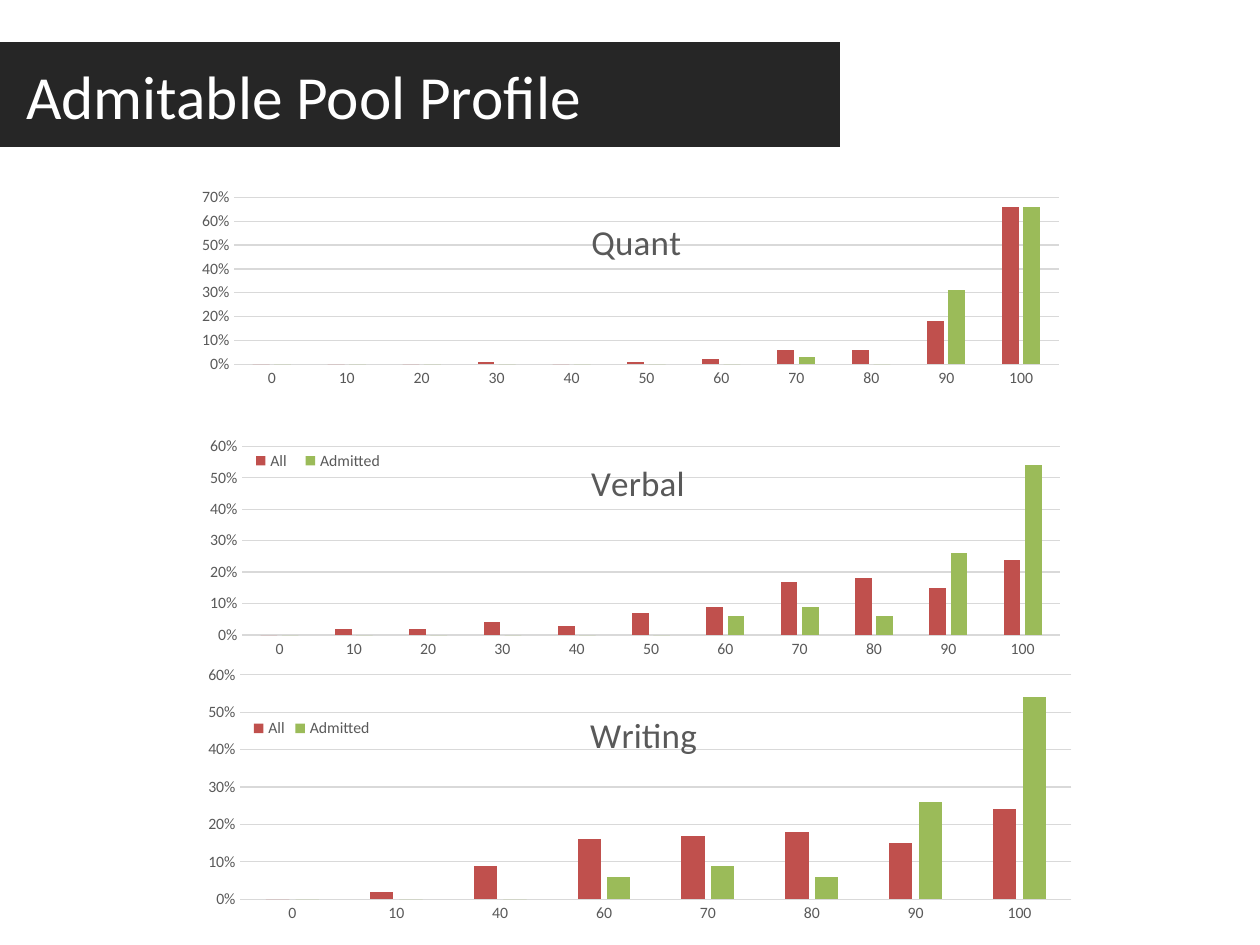
from pptx import Presentation
from pptx.chart.data import CategoryChartData
from pptx.dml.color import RGBColor
from pptx.enum.chart import XL_CHART_TYPE as ChartType
from pptx.enum.chart import XL_LEGEND_POSITION as LegendPosition
from pptx.enum.chart import XL_TICK_MARK as TickMark
from pptx.enum.shapes import MSO_SHAPE as Shape
from pptx.enum.text import MSO_ANCHOR as Anchor
from pptx.oxml.ns import qn
from pptx.oxml.xmlchemy import OxmlElement
from pptx.util import Pt

FONT = "Calibri"
GREY, GRID = "595959", "D9D9D9"
SERIES_COLORS = {"All": "C0504D", "Admitted": "9BBB59"}
DECILES = [str(value) for value in range(0, 101, 10)]

# Frame is left, top, width, height in points; layouts are fractions of it
CHARTS = [
    dict(title="Quant", frame=(103.7, 84.2, 512.6, 144), categories=DECILES,
         all_scores=[0, 0, 0, 0.01, 0, 0.01, 0.02, 0.06, 0.06, 0.18, 0.66],
         admitted=[0, 0, 0, 0, 0, 0, 0, 0.03, 0, 0.31, 0.66], top=0.7,
         plot=(0.059, 0.199, 0.919, 0.662), title_at=(0.45, 0.25)),
    dict(title="Verbal", frame=(108, 226.1, 508.3, 151.9), categories=DECILES,
         all_scores=[0, 0.02, 0.02, 0.04, 0.03, 0.07, 0.09, 0.17, 0.18, 0.15, 0.24],
         admitted=[0, 0, 0, 0, 0, 0, 0.06, 0.09, 0.06, 0.26, 0.54], top=0.6,
         plot=(0.06, 0.191, 0.919, 0.71), title_at=(0.445, 0.21),
         legend_at=(0.06, 0.2, 0.17, 0.09)),
    dict(title="Writing", frame=(108, 380.2, 516.2, 156.2),
         categories=["0", "10", "40", "60", "70", "80", "90", "100"],
         all_scores=[0, 0.02, 0.09, 0.16, 0.17, 0.18, 0.15, 0.24],
         admitted=[0, 0, 0, 0.06, 0.09, 0.06, 0.26, 0.54], top=0.6,
         plot=(0.057, 0.035, 0.92, 0.821), title_at=(0.437, 0.14),
         legend_at=(0.066, 0.186, 0.14, 0.09)),
]


def rgb(color):
    return RGBColor.from_string(color)


def style_font(font, size, color):
    font.name, font.size, font.bold = FONT, Pt(size), False
    font.color.rgb = rgb(color)


def style_line(line, color):
    line.color.rgb = rgb(color)
    line.width = Pt(0.75)


def add_banner(page, text, *, frame, fill, size, color, indent):
    box = page.shapes.add_shape(Shape.RECTANGLE, *map(Pt, frame))
    box.shadow.inherit = False
    box.fill.solid()
    box.fill.fore_color.rgb = rgb(fill)
    box.line.fill.background()
    box.text_frame.word_wrap = True
    box.text_frame.vertical_anchor = Anchor.MIDDLE
    box.text_frame.margin_left = Pt(indent)
    para = box.text_frame.paragraphs[0]
    para.alignment = 1
    span = para.add_run()
    span.text = text
    style_font(span.font, size, color)


def set_layout(parent, index, fractions, inner=False):
    """Place a chart part by x, y and, where given, width and height."""
    for old in parent.findall(qn("c:layout")):
        parent.remove(old)
    layout, manual = OxmlElement("c:layout"), OxmlElement("c:manualLayout")
    settings = [("layoutTarget", "inner")] if inner else []
    settings += [("xMode", "edge"), ("yMode", "edge")]
    settings += zip("xywh", fractions)
    for name, value in settings:
        child = OxmlElement("c:" + name)
        child.set("val", str(value))
        manual.append(child)
    layout.append(manual)
    parent.insert(index, layout)


def style_axes(chart, top):
    for axis in (chart.category_axis, chart.value_axis):
        axis.major_tick_mark = axis.minor_tick_mark = TickMark.NONE
        style_font(axis.tick_labels.font, 9, GREY)
    style_line(chart.category_axis.format.line, GRID)
    values = chart.value_axis
    values.minimum_scale, values.maximum_scale, values.major_unit = 0, top, 0.1
    values.format.line.fill.background()
    values.has_major_gridlines = True
    style_line(values.major_gridlines.format.line, GRID)
    values.tick_labels.number_format = "0%"
    values.tick_labels.number_format_is_linked = False


def add_title(chart, text, position):
    chart.has_title = True
    title = chart.chart_title
    span = title.text_frame.paragraphs[0].add_run()
    span.text = text
    style_font(span.font, 20, GREY)
    set_layout(title._element, 1, position)


def add_legend(chart, position):
    chart.has_legend = True
    legend = chart.legend
    legend.position = LegendPosition.BOTTOM
    legend.include_in_layout = False
    style_font(legend.font, 9, GREY)
    set_layout(legend._element, 1, position)


def add_score_chart(page, *, title, frame, categories, all_scores, admitted,
                    top, plot, title_at, legend_at=None):
    data = CategoryChartData(number_format="0%")
    data.categories = categories
    for name, values in zip(SERIES_COLORS, (all_scores, admitted)):
        data.add_series(name, values)
    chart = page.shapes.add_chart(
        ChartType.COLUMN_CLUSTERED, *map(Pt, frame), data).chart
    style_font(chart.font, 10, "000000")

    # Columns
    columns = chart.plots[0]
    columns.gap_width, columns.overlap = 219, -27
    columns.vary_by_categories = False
    for series in columns.series:
        series.format.fill.solid()
        series.format.fill.fore_color.rgb = rgb(SERIES_COLORS[series.name])
        series.invert_if_negative = False

    # Axes, title, legend and plot area
    style_axes(chart, top)
    add_title(chart, title, title_at)
    chart.has_legend = False
    if legend_at:
        add_legend(chart, legend_at)
    plot_area = chart._chartSpace.find(".//" + qn("c:plotArea"))
    set_layout(plot_area, 0, plot, inner=True)


def main():
    deck = Presentation()
    deck.slide_width, deck.slide_height = Pt(720), Pt(540)
    page = deck.slides.add_slide(deck.slide_layouts[6])
    add_banner(page, "Admitable Pool Profile", frame=(0, 24, 480, 60),
               fill="262626", size=35, color="FFFFFF", indent=15)
    for chart in CHARTS:
        add_score_chart(page, **chart)
    deck.save("out.pptx")


if __name__ == "__main__":
    main()
